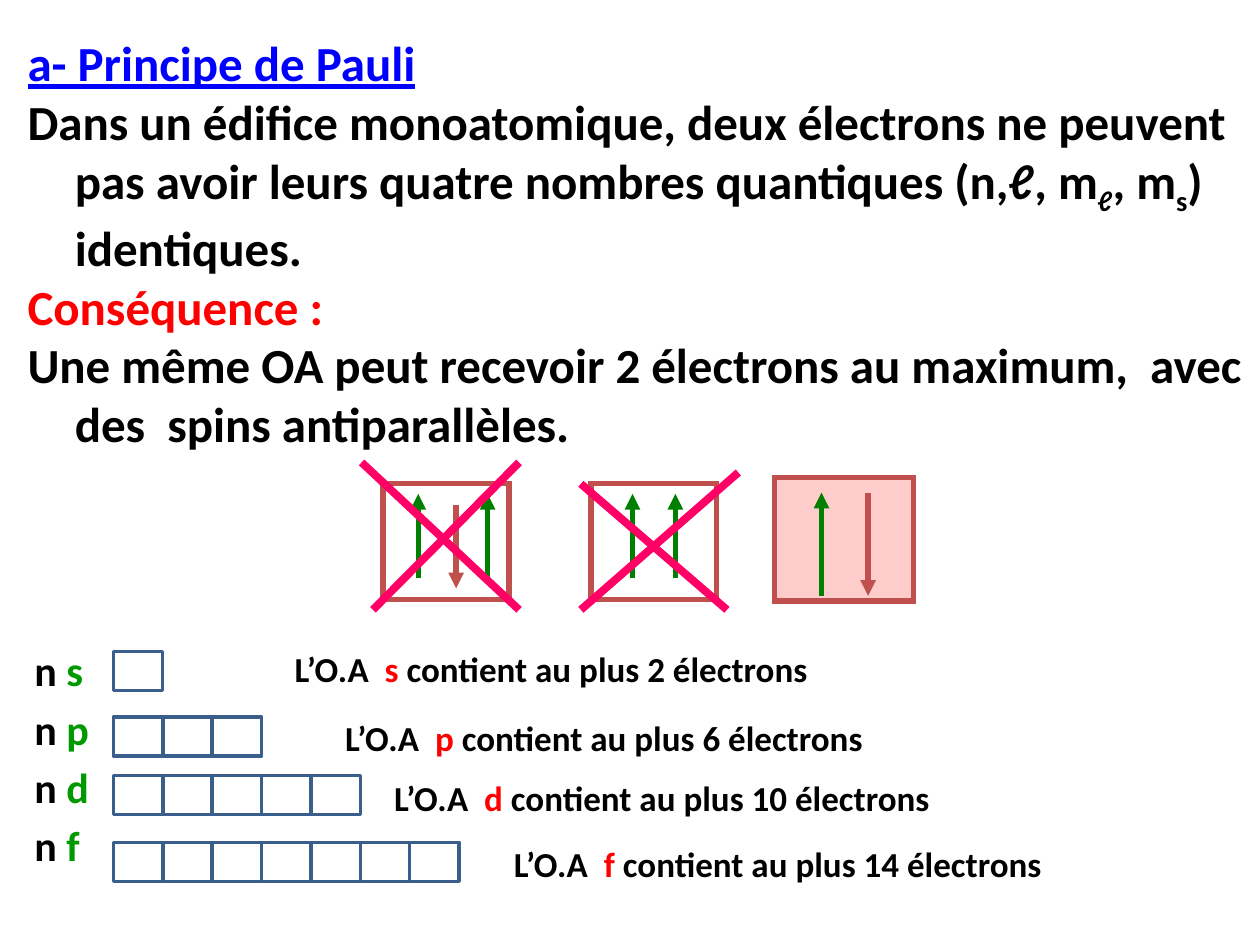
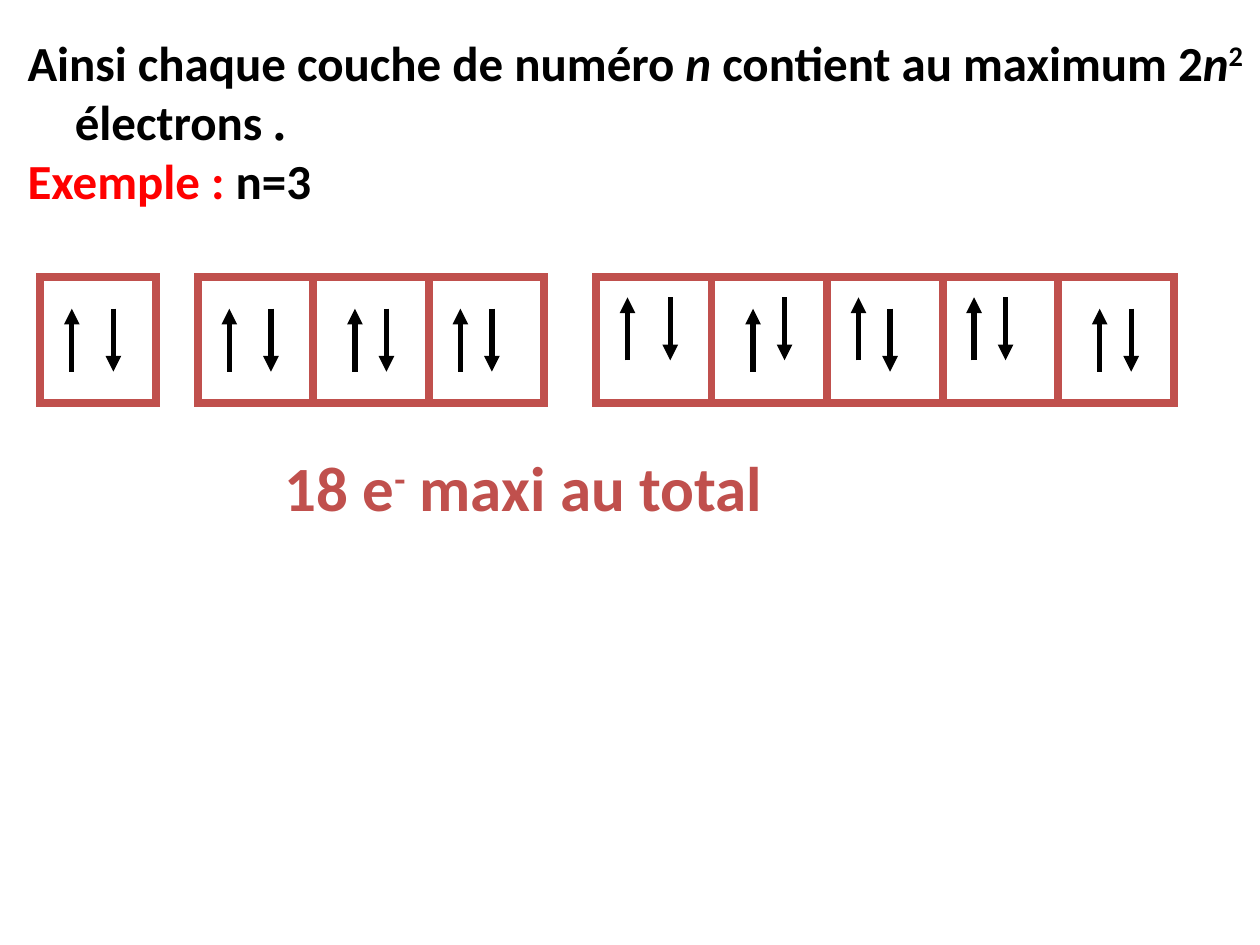
from dataclasses import dataclass
from typing import NamedTuple

from lxml.etree import SubElement
from pptx import Presentation
from pptx.dml.color import RGBColor
from pptx.enum.shapes import MSO_CONNECTOR as Connector, MSO_SHAPE as Preset
from pptx.oxml.ns import qn
from pptx.util import Inches, Pt

SLIDE_WIDTH, SLIDE_HEIGHT = Inches(10), Inches(7.5)
COLUMNS, ROWS = 100, 75


@dataclass(frozen=True)
class Theme:
    font: str = "Calibri"
    serif: str = "Times New Roman"
    ink: str = "000000"
    paper: str = "FFFFFF"
    heading: str = "0000FF"
    accent: str = "FF0000"
    subshell: str = "009900"
    frame: str = "C0504D"
    allowed: str = "FFCCCC"
    spin_up: str = "008000"
    cross: str = "FF0066"
    small_frame: str = "3A5F8C"
    body_size: float = 28
    label_size: float = 24
    caption_size: float = 20
    total_size: float = 36


THEME = Theme()


class Area(NamedTuple):
    left: float
    top: float
    width: float
    height: float


class Point(NamedTuple):
    column: float
    row: float


class Stroke(NamedTuple):
    color: str
    width: float


class Span(NamedTuple):
    text: str
    color: str = THEME.ink
    baseline: int = 0
    italic: bool = False
    underline: bool = False
    font: str = THEME.font


class Cross(NamedTuple):
    falling: tuple[Point, Point]
    rising: tuple[Point, Point]


@dataclass(frozen=True)
class PauliCase:
    box: Area
    ups: list[float]
    downs: list[float]
    spin_rows: tuple[float, float]
    down_rows: tuple[float, float]
    cross: Cross | None = None


class Subshell(NamedTuple):
    letter: str
    orbitals: int
    row: float
    caption: Point


class SpinPair(NamedTuple):
    """Offsets of both spins inside their cell, and the rows they start on."""
    up: float
    down: float
    up_row: float
    down_row: float


class FilledSubshell(NamedTuple):
    left: float
    pairs: list[SpinPair]


BODY_LEFT, BODY_TOP, BODY_WIDTH = 1.2, 2.1, 100.8
HANGING = 3.75

FRAME = Stroke(THEME.frame, 3)
SHELL_FRAME = Stroke(THEME.frame, 4.5)
SMALL_FRAME = Stroke(THEME.small_frame, 2)
CROSS = Stroke(THEME.cross, 4.5)
UP = Stroke(THEME.spin_up, 3)
DOWN = Stroke(THEME.frame, 3)
SPIN = Stroke(THEME.ink, 3)

PAULI_CASES = [
    PauliCase(Area(30.4, 38.4, 10, 9.2), [33.2, 38.7], [36.2], (39.2, 45.9), (40.1, 46.7),
              Cross((Point(28.7, 36.7), Point(41.2, 48.4)), (Point(29.6, 48.4), Point(41.2, 36.7)))),
    PauliCase(Area(46.9, 38.4, 10, 9.2), [50.2, 53.6], [], (39.2, 45.9), (39.2, 45.9),
              Cross((Point(46.1, 38.4), Point(57.7, 48.4)), (Point(46.1, 48.4), Point(58.6, 37.5)))),
    PauliCase(Area(61.5, 37.9, 11, 9.8), [65.2], [68.9], (39.1, 47.3), (39.1, 47.3)),
]

SUBSHELLS = [
    Subshell("s", 1, 51.7, Point(22.4, 50.9)),
    Subshell("p", 3, 56.9, Point(26.4, 56.4)),
    Subshell("d", 5, 61.55, Point(30.3, 61.1)),
    Subshell("f", 7, 66.85, Point(39.8, 66.4)),
]
SMALL_CELL = Area(9, 0, 3.92, 3.1)

SHELL_CELL = Area(0, 22, 9.17, 10)
SPIN_LENGTH = 5
HIGH, LOW = 23.6, 24.5
FILLED_SUBSHELLS = [
    FilledSubshell(3.2, [SpinPair(2.5, 5.8, LOW, LOW)]),
    FilledSubshell(15.7, [
        SpinPair(2.5, 5.8, LOW, LOW),
        SpinPair(3.3, 5.8, LOW, LOW),
        SpinPair(2.5, 5, LOW, LOW),
    ]),
    FilledSubshell(47.3, [
        SpinPair(2.5, 5.9, HIGH, HIGH),
        SpinPair(3.3, 5.8, LOW, HIGH),
        SpinPair(2.5, 5, HIGH, LOW),
        SpinPair(2.5, 5, HIGH, HIGH),
        SpinPair(3.3, 5.8, LOW, LOW),
    ]),
]


def across(columns: float) -> int:
    return round(SLIDE_WIDTH * columns / COLUMNS)


def down(rows: float) -> int:
    return round(SLIDE_HEIGHT * rows / ROWS)


def place(area: Area) -> tuple[int, int, int, int]:
    return across(area.left), down(area.top), across(area.width), down(area.height)


def write(slide, area: Area, paragraphs: list[list[Span]], size: float,
          indent: float = 0, hanging: bool = False, gap: float = 0) -> None:
    frame = slide.shapes.add_textbox(*place(area)).text_frame
    frame.word_wrap = True
    for index, spans in enumerate(paragraphs):
        paragraph = frame.add_paragraph() if index else frame.paragraphs[0]
        paragraph.space_before = Pt(gap)
        properties = paragraph._p.get_or_add_pPr()
        properties.set("marL", str(across(indent)))
        properties.set("indent", str(-across(indent) if hanging else 0))
        for span in spans:
            run = paragraph.add_run()
            run.text = span.text
            font = run.font
            font.name, font.size, font.bold = span.font, Pt(size), True
            font.italic, font.underline = span.italic, span.underline
            font.color.rgb = RGBColor.from_string(span.color)
            if span.baseline:
                run._r.get_or_add_rPr().set("baseline", str(span.baseline * 1000))


def write_body(slide, height: float, paragraphs: list[list[Span]]) -> None:
    write(slide, Area(BODY_LEFT, BODY_TOP, BODY_WIDTH, height), paragraphs,
          THEME.body_size, HANGING, hanging=True)


def apply_stroke(line, stroke: Stroke) -> None:
    line.color.rgb = RGBColor.from_string(stroke.color)
    line.width = Pt(stroke.width)


def draw_box(slide, area: Area, stroke: Stroke, fill: str | None = None,
             sharp: bool = True) -> None:
    box = slide.shapes.add_shape(Preset.RECTANGLE, *place(area))
    box.shadow.inherit = False
    if fill:
        box.fill.solid()
        box.fill.fore_color.rgb = RGBColor.from_string(fill)
    else:
        box.fill.background()
    apply_stroke(box.line, stroke)
    if sharp:
        SubElement(box._element.spPr.find(qn("a:ln")), qn("a:miter"), lim="800000")


def draw_line(shapes, start: Point, end: Point, stroke: Stroke, arrow: bool = False) -> None:
    line = shapes.add_connector(Connector.STRAIGHT, across(start.column), down(start.row),
                                across(end.column), down(end.row))
    apply_stroke(line.line, stroke)
    properties = line._element.spPr
    if arrow:
        SubElement(properties.find(qn("a:ln")), qn("a:tailEnd"), type="triangle")
    SubElement(properties, qn("a:effectLst"))


def draw_spin(shapes, column: float, start: float, end: float, stroke: Stroke) -> None:
    draw_line(shapes, Point(column, start), Point(column, end), stroke, arrow=True)


def draw_pauli_case(slide, case: PauliCase) -> None:
    draw_box(slide, case.box, FRAME, None if case.cross else THEME.allowed)
    top, bottom = case.spin_rows
    for column in case.ups:
        draw_spin(slide.shapes, column, bottom, top, UP)
    for column in case.downs:
        draw_spin(slide.shapes, column, *case.down_rows, DOWN)
    for start, end in case.cross or ():
        draw_line(slide.shapes, start, end, CROSS)


def draw_subshell(slide, subshell: Subshell) -> None:
    for index in range(subshell.orbitals):
        left = SMALL_CELL.left + index * SMALL_CELL.width
        draw_box(slide, SMALL_CELL._replace(left=left, top=subshell.row),
                 SMALL_FRAME, THEME.paper, sharp=False)
    caption = [Span("L’O.A  "), Span(f"{subshell.letter} ", THEME.accent),
               Span(f"contient au plus {2 * subshell.orbitals} électrons")]
    write(slide, Area(*subshell.caption, 60, 4.3), [caption], THEME.caption_size)


def draw_filled_subshell(slide, subshell: FilledSubshell) -> None:
    lefts = [subshell.left + index * SHELL_CELL.width for index in range(len(subshell.pairs))]
    for left in lefts:
        draw_box(slide, SHELL_CELL._replace(left=left), SHELL_FRAME)
    spins = slide.shapes.add_group_shape().shapes
    for left, pair in zip(lefts, subshell.pairs):
        draw_spin(spins, left + pair.up, pair.up_row + SPIN_LENGTH, pair.up_row, SPIN)
        draw_spin(spins, left + pair.down, pair.down_row, pair.down_row + SPIN_LENGTH, SPIN)


def build_pauli_slide(slide) -> None:
    write_body(slide, 33.7, [
        [Span("a- Principe de Pauli", THEME.heading, underline=True)],
        [Span("Dans un édifice monoatomique, deux électrons ne peuvent pas avoir "
              "leurs quatre nombres quantiques (n,ℓ, m"),
         Span("ℓ", baseline=-25), Span(", m"), Span("s", baseline=-25), Span(") identiques.")],
        [Span("Conséquence :", THEME.accent)],
        [Span("Une même OA peut recevoir 2 électrons au maximum,  avec des  spins antiparallèles.")],
    ])
    for case in PAULI_CASES:
        draw_pauli_case(slide, case)
    labels = [[Span("n"), Span(f" {subshell.letter}", THEME.subshell)] for subshell in SUBSHELLS]
    write(slide, Area(-2, 50.7, 12.6, 23), labels, THEME.label_size, HANGING, gap=4.5)
    for subshell in SUBSHELLS:
        draw_subshell(slide, subshell)


def build_shell_slide(slide) -> None:
    write_body(slide, 15, [
        [Span("Ainsi chaque couche de numéro "), Span("n ", italic=True),
         Span("contient au maximum 2"), Span("n", italic=True), Span("2", baseline=30),
         Span(" électrons "), Span(".", font=THEME.serif)],
        [Span("Exemple :", THEME.accent), Span(" n=3")],
    ])
    for subshell in FILLED_SUBSHELLS:
        draw_filled_subshell(slide, subshell)
    total = [Span("18 e", THEME.frame), Span("-", THEME.frame, baseline=30),
             Span(" maxi au total", THEME.frame)]
    write(slide, Area(21.6, 35.1, 50, 7), [total], THEME.total_size)


def main() -> None:
    deck = Presentation()
    deck.slide_width, deck.slide_height = SLIDE_WIDTH, SLIDE_HEIGHT
    blank = deck.slide_layouts[6]
    for build in (build_pauli_slide, build_shell_slide):
        build(deck.slides.add_slide(blank))
    deck.save("out.pptx")


if __name__ == "__main__":
    main()
